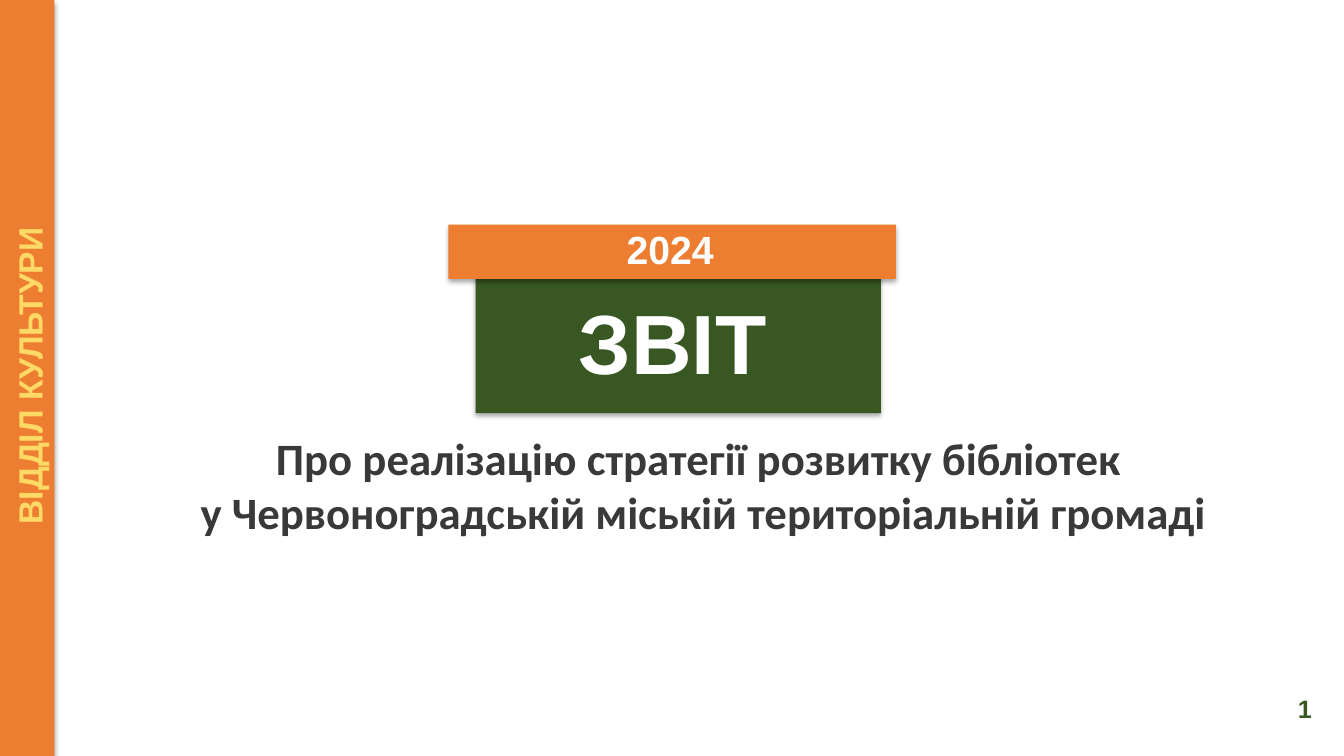
from lxml import etree
from pptx import Presentation
from pptx.dml.color import RGBColor
from pptx.enum.shapes import MSO_SHAPE
from pptx.enum.text import MSO_AUTO_SIZE, PP_ALIGN
from pptx.oxml.ns import qn
from pptx.util import Cm, Pt

RECT = MSO_SHAPE.RECTANGLE
GROW = MSO_AUTO_SIZE.SHAPE_TO_FIT_TEXT
LEFT, MID = PP_ALIGN.LEFT, PP_ALIGN.CENTER

COLORS = {"orange": "ED7D31", "green": "385723", "gold": "FFD966",
          "white": "FFFFFF", "dark": "3B3838"}
SIZE = (33.87, 19.05)

# left, top, width, height in cm; colour
BLOCKS = [
    ((0, 0, 1.37, SIZE[1]), "orange"),
    ((11.99, 6.4, 10.21, 4.01), "green"),
    ((11.3, 5.66, 11.28, 1.37), "orange"),
]

# lines; place in cm; font, size, colour; align, wrap, turn
TEXTS = [
    (["ВІДДІЛ КУЛЬТУРИ"], (-4.62, 7.47, 10.72, 1.27),
     ("Arial", 24, "gold"), (LEFT, True, 270)),
    (["2024"], (15.54, 5.56, 7.32, 1.45),
     ("Arial", 28, "white"), (LEFT, True, 0)),
    (["ЗВІТ"], (14.33, 7.19, 5.97, 2.82),
     ("Arial", 60, "white"), (LEFT, True, 0)),
    (["Про реалізацію стратегії розвитку бібліотек ",
      "у Червоноградській міській територіальній громаді"],
     (4.52, 10.74, 26.44, 3), ("Calibri", 32, "dark"), (MID, False, 0)),
    (["1"], (32.46, 17.35, 0.86, 1.02),
     ("Arial", 18, "green"), (LEFT, False, 0)),
]


def color(name):
    return RGBColor.from_string(COLORS[name])


def add_shadow(shape):
    """Give the shape a soft black shadow that falls straight down."""
    shape.shadow.inherit = False
    effects = shape._element.spPr.find(qn("a:effectLst"))
    outer = etree.SubElement(effects, qn("a:outerShdw"), blurRad=str(Pt(3.5)),
                             dist=str(Pt(2.2)), dir="5400000",
                             algn="ctr", rotWithShape="0")
    tint = etree.SubElement(outer, qn("a:srgbClr"), val="000000")
    etree.SubElement(tint, qn("a:alpha"), val="32000")


def add_block(slide, place, fill):
    block = slide.shapes.add_shape(RECT, *map(Cm, place))
    block.fill.solid()
    block.fill.fore_color.rgb = color(fill)
    block.line.fill.background()
    add_shadow(block)


def add_text(slide, lines, place, style, layout):
    face, size, tone = style
    align, wrap, turn = layout
    box = slide.shapes.add_textbox(*map(Cm, place))
    box.rotation = turn
    frame = box.text_frame
    frame.text = "\n".join(lines)
    frame.word_wrap = wrap
    frame.auto_size = GROW
    for para in frame.paragraphs:
        para.alignment = align
        font = para.font
        font.name, font.size, font.bold = face, Pt(size), True
        font.color.rgb = color(tone)


def main():
    deck = Presentation()
    deck.slide_width, deck.slide_height = map(Cm, SIZE)
    slide = deck.slides.add_slide(deck.slide_layouts[6])
    for block in BLOCKS:
        add_block(slide, *block)
    for text in TEXTS:
        add_text(slide, *text)
    deck.save("out.pptx")


if __name__ == "__main__":
    main()
